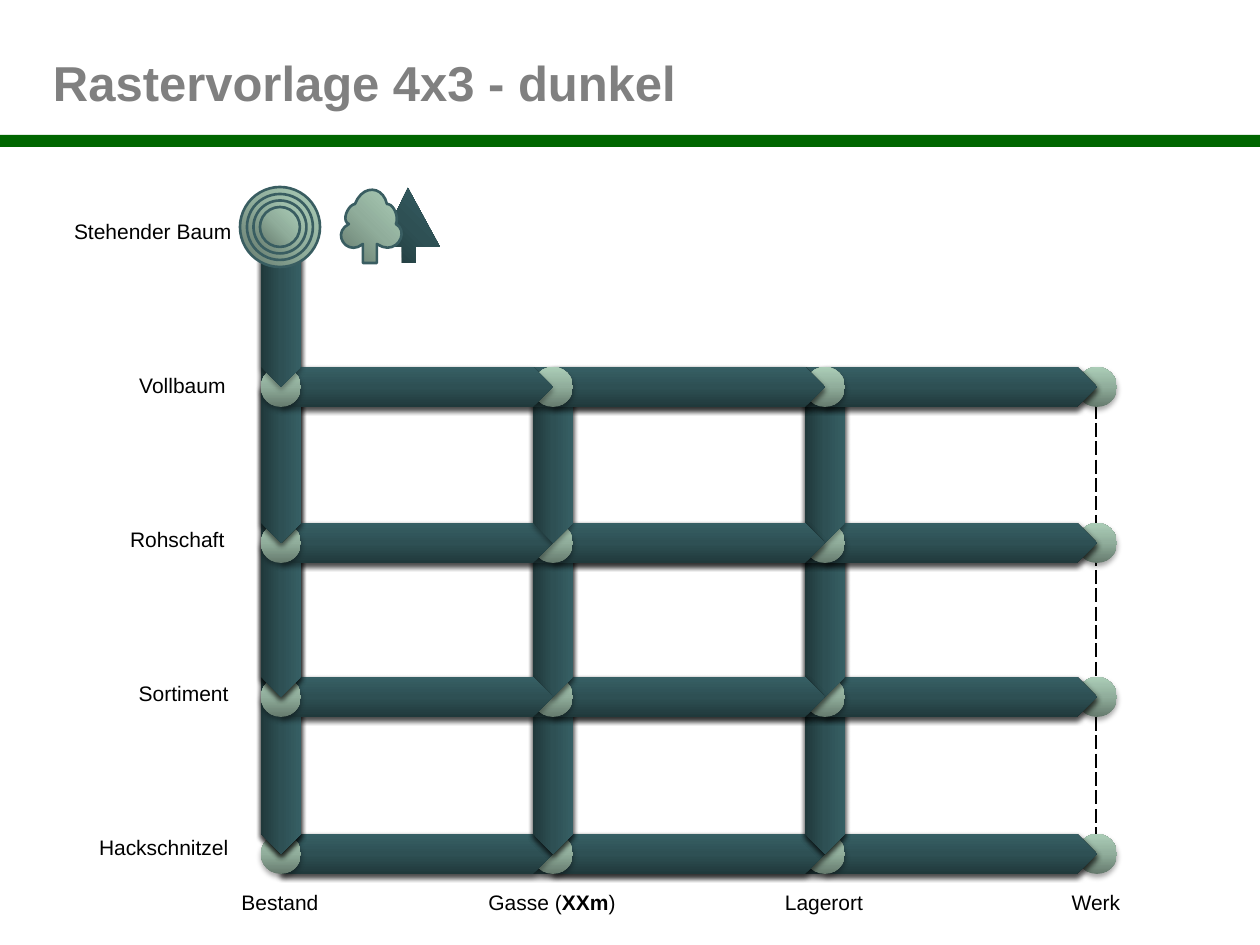
from lxml.etree import SubElement
from pptx import Presentation
from pptx.dml.color import RGBColor
from pptx.enum.shapes import MSO_SHAPE
from pptx.enum.text import MSO_ANCHOR, PP_ALIGN
from pptx.oxml.ns import qn
from pptx.util import Emu, Pt

PX = 914400 / 126
BLACK = RGBColor(0x00, 0x00, 0x00)
GREEN = RGBColor(0x00, 0x66, 0x00)
GREY = RGBColor(0x80, 0x80, 0x80)
OUTLINE = RGBColor(0x39, 0x5D, 0x61)
DARK = [RGBColor(0x20, 0x39, 0x3B), RGBColor(0x2E, 0x50, 0x54), RGBColor(0x36, 0x5F, 0x64)]
LIGHT = [RGBColor(0x65, 0x7A, 0x6D), RGBColor(0x90, 0xAD, 0x9B), RGBColor(0xAB, 0xCD, 0xB7)]
NO_STYLE = "{2D5ABB26-0587-4C30-8999-92F81FD0307C}"

TITLE = "Rastervorlage 4x3 - dunkel"
# text, right edge of its box
STATES = [("Stehender Baum", 244), ("Vollbaum", 238), ("Rohschaft", 237),
          ("Sortiment", 241), ("Hackschnitzel", 241)]
# runs (text, bold), width of the box
PLACES = [([("Bestand", False)], 125),
          ([("Gasse (", False), ("XXm", True), (")", False)], 203),
          ([("Lagerort", False)], 125),
          ([("Werk", False)], 178)]

COLUMN_X = [281 + 272 * index for index in range(4)]
ROW_Y = [233, 387, 543, 697, 854]  # the first row is the standing tree
BAND = 40
# crossings where the horizontal arrow lies over the vertical one
ACROSS_ON_TOP = {(2, 3), (1, 3), (2, 2)}

RING_CENTRE = (280, 227)
RING_SIZES = [80, 66, 53, 40]
FIR = [(416, 263), (416, 247), (440, 247), (408, 188), (379, 247), (402, 247), (402, 263)]
TRUNK = [(363, 263), (377, 263), (377, 244)]
# Bezier curves of the crown: two control points and the end point
CROWN = [((396, 257), (410, 232), (396, 224)), ((399, 217), (394, 204), (387, 204)),
         ((383, 186), (363, 184), (355, 204)), ((348, 205), (341, 221), (349, 224)),
         ((331, 233), (347, 257), (363, 244))]


def px(value):
    return Emu(round(value * PX))


def box(left, top, width, height):
    return px(left), px(top), px(width), px(height)


def write(frame, runs, size=12, color=BLACK, align=PP_ALIGN.LEFT, wrap=True):
    frame.word_wrap = wrap
    paragraph = frame.paragraphs[0]
    paragraph.alignment = align
    for text, bold in runs:
        run = paragraph.add_run()
        run.text = text
        run.font.name = "Arial"
        run.font.size = Pt(size)
        run.font.bold = bold
        run.font.color.rgb = color


def paint(shape, colors, angle, outlined=False, shadow=False):
    """Three-stop gradient, with an optional outline and soft shadow."""
    shape.fill.gradient()
    gradient = shape._element.spPr.find(qn("a:gradFill"))
    for child in list(gradient):
        gradient.remove(child)
    stops = SubElement(gradient, qn("a:gsLst"))
    for position, color in zip((0, 50000, 100000), colors):
        stop = SubElement(stops, qn("a:gs"), pos=str(position))
        SubElement(stop, qn("a:srgbClr"), val=str(color))
    SubElement(gradient, qn("a:lin"), ang=str(angle * 60000), scaled="0")
    if outlined:
        shape.line.color.rgb = OUTLINE
        shape.line.width = Pt(1.5)
    else:
        shape.line.fill.background()
    shape.shadow.inherit = False
    if shadow:
        effects = shape._element.spPr.find(qn("a:effectLst"))
        outer = SubElement(effects, qn("a:outerShdw"), blurRad=str(Pt(3.1)),
                           dist=str(Pt(1.8)), dir="5400000", rotWithShape="0")
        color = SubElement(outer, qn("a:srgbClr"), val=str(BLACK))
        SubElement(color, qn("a:alpha"), val="35000")


def add_circle(shapes, x, y, size, angle=270, **style):
    circle = shapes.add_shape(MSO_SHAPE.OVAL, *box(x - size / 2, y - size / 2, size, size))
    paint(circle, LIGHT, angle, **style)


def add_arrow(shapes, start, end):
    """Pentagon band from one crossing to another, rightwards or downwards."""
    (x1, y1), (x2, y2) = start, end
    length = x2 - x1 + y2 - y1
    arrow = shapes.add_shape(MSO_SHAPE.PENTAGON, *box(
        (x1 + x2 - length) / 2, (y1 + y2 - BAND) / 2, length, BAND))
    arrow.rotation = 90 if x1 == x2 else 0
    paint(arrow, DARK, 270, shadow=True)


def add_outline(shapes, points, colors, outlined=False):
    scaled = [(px(x), px(y)) for x, y in points]
    builder = shapes.build_freeform(*scaled[0], scale=1.0)
    builder.add_line_segments(scaled[1:], close=True)
    paint(builder.convert_to_shape(), colors, 315, outlined=outlined)


def curve_points(start, control1, control2, end, steps=10):
    for step in range(1, steps + 1):
        t = step / steps
        weights = ((1 - t) ** 3, 3 * t * (1 - t) ** 2, 3 * t * t * (1 - t), t ** 3)
        yield tuple(sum(weight * value for weight, value in zip(weights, values))
                    for values in zip(start, control1, control2, end))


def add_dashed_grid(shapes):
    table_frame = shapes.add_table(4, 3, *box(280, 231, 816, 624))
    table = table_frame.table
    table._tbl.tblPr.find(qn("a:tableStyleId")).text = NO_STYLE
    table.first_row = table.horz_banding = False
    for row in range(4):
        for column in range(3):
            cell = table.cell(row, column)
            properties = cell._tc.get_or_add_tcPr()
            for side in "LRTB":
                if row == 0 and side != "B" and (side, column) != ("L", 0):
                    continue
                line = SubElement(properties, qn("a:ln" + side), w=str(Pt(1)))
                fill = SubElement(line, qn("a:solidFill"))
                SubElement(fill, qn("a:srgbClr"), val=str(BLACK))
                SubElement(line, qn("a:prstDash"), val="dash")
            cell.fill.background()


def add_network(shapes):
    """Paint diagonals from bottom right to top left, so nearer arrows lie on top."""
    def crossing(column, row):
        return COLUMN_X[column], ROW_Y[row]

    for diagonal in range(7, 0, -1):
        targets = [(diagonal - row, row) for row in range(4, 0, -1) if 0 <= diagonal - row <= 3]
        for target in targets:
            add_circle(shapes, *crossing(*target), BAND, shadow=True)
        for column, row in targets:
            across = [(start, row) for start in range(column)]
            first_row = 0 if column == 0 else 1
            down = [(column, start) for start in range(first_row, row)] if column < 3 else []
            starts = down + across if (column, row) in ACROSS_ON_TOP else across + down
            for start in starts:
                add_arrow(shapes, crossing(*start), crossing(column, row))


def add_labels(shapes):
    for index, (text, right) in enumerate(STATES):
        label = shapes.add_textbox(*box(right - 184, 212 + 154 * index, 184, 38))
        write(label.text_frame, [(text, False)], align=PP_ALIGN.RIGHT, wrap=False)
    for x, (runs, width) in zip(COLUMN_X, PLACES):
        label = shapes.add_textbox(*box(x - 1 - width / 2, 883, width, 38))
        write(label.text_frame, runs, align=PP_ALIGN.CENTER)


def main():
    presentation = Presentation()
    presentation.slide_width, presentation.slide_height = px(1260), px(945)
    slide = presentation.slides.add_slide(presentation.slide_layouts[5])
    shapes = slide.shapes

    title = shapes.title
    title.left, title.top, title.width, title.height = box(53, 55, 1043, 53)
    title.text_frame.margin_left = 0
    title.text_frame.vertical_anchor = MSO_ANCHOR.MIDDLE
    write(title.text_frame, [(TITLE, True)], size=28, color=GREY)

    bar = shapes.add_shape(MSO_SHAPE.RECTANGLE, *box(0, 135, 1260, 12))
    bar.fill.solid()
    bar.fill.fore_color.rgb = GREEN
    bar.line.fill.background()
    bar.shadow.inherit = False

    add_dashed_grid(shapes)
    add_labels(shapes)
    add_outline(shapes, FIR, DARK)
    leaf_tree = list(TRUNK)
    for curve in CROWN:
        leaf_tree.extend(curve_points(leaf_tree[-1], *curve))
    add_outline(shapes, leaf_tree, LIGHT, outlined=True)
    add_network(shapes)
    for size in RING_SIZES:
        add_circle(shapes, *RING_CENTRE, size, angle=315, outlined=True)
    presentation.save("out.pptx")


if __name__ == "__main__":
    main()
